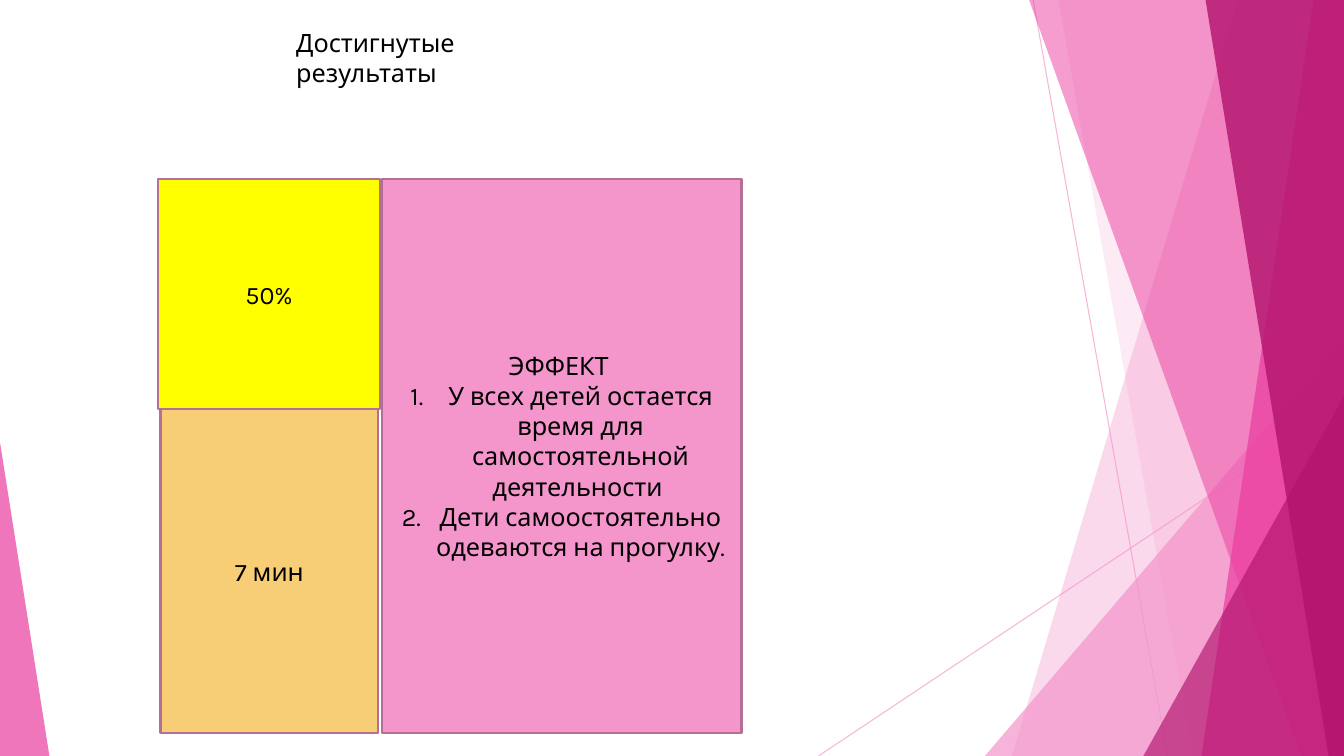
import pptx
import pptx.util
import pptx.dml.color
import pptx.enum.shapes
import pptx.enum.text
import pptx.oxml.ns
from lxml import etree

Pt = pptx.util.Pt
RGBColor = pptx.dml.color.RGBColor
MSO_SHAPE = pptx.enum.shapes.MSO_SHAPE
qn = pptx.oxml.ns.qn

WIDTH, HEIGHT = 960, 540
FONT, FONT_SIZE = "Karla", 18
BLACK = RGBColor(0x00, 0x00, 0x00)
YELLOW = RGBColor(0xFF, 0xFF, 0x00)
SAND = RGBColor(0xF7, 0xCD, 0x75)
LIGHT_PINK = RGBColor(0xF4, 0x96, 0xCB)
HOT_PINK = RGBColor(0xEB, 0x3D, 0x9F)
DARK_PINK = RGBColor(0xB2, 0x13, 0x6D)
BORDER = RGBColor(0xB5, 0x6F, 0x96)

TITLE = "Достигнутые результаты"
TITLE_BOX = (204.5, 15.8, 227, 29)

# left, top, width, height, fill, paragraphs
PANELS = [
    (113, 127.6, 158.4, 164.8, YELLOW, ["50%"]),
    (114.7, 292.4, 155.5, 231.2, SAND, ["7 мин"]),
    (272.7, 127.6, 257, 396, LIGHT_PINK, [
        "ЭФФЕКТ ",
        "У всех детей остается время для самостоятельной деятельности ",
        "Дети самоостоятельно одеваются на прогулку.",
    ]),
]
NUMBER_INDENT = 27

# x1, y1, x2, y2
RAYS = [(738, 0, 834, HEIGHT), (WIDTH, 290, 584.6, HEIGHT)]

# "band": left edge at the top and at the bottom; it reaches the right slide edge
# "triangle": left, top, width, apex position; it stands on the bottom edge
FACETS = [
    ("band", (884.2, 722.9), LIGHT_PINK, 36),
    ("band", (756, 851.8), LIGHT_PINK, 20),
    ("triangle", (703.5, 240, 256.5, 1), LIGHT_PINK, 72),
    ("band", (735.1, 929.5), HOT_PINK, 50),
    ("band", (938.2, 858.2), HOT_PINK, 70),
    ("band", (861.1, 949), DARK_PINK, 80),
    ("triangle", (816.7, 283, 143.3, 1), DARK_PINK, 66),
    ("triangle", (0, 316, 35.3, 0), HOT_PINK, 70),
]


def set_opacity(fill_owner, percent):
    """Add an alpha value to the solid colour found inside the element."""
    color = next(fill_owner.iter(qn("a:srgbClr")))
    etree.SubElement(color, qn("a:alpha")).set("val", str(percent * 1000))


def add_ray(slide, points):
    ray = slide.shapes.add_connector(
        pptx.enum.shapes.MSO_CONNECTOR.STRAIGHT, *map(Pt, points))
    ray.line.color.rgb = LIGHT_PINK
    ray.line.width = Pt(0.75)
    properties = ray._element.spPr
    set_opacity(properties, 70)
    etree.SubElement(properties, qn("a:effectLst"))


def add_facet(slide, kind, geometry, color, opacity):
    if kind == "band":
        top_x, bottom_x = geometry
        builder = slide.shapes.build_freeform(Pt(top_x), Pt(0))
        corners = [(WIDTH, 0), (WIDTH, HEIGHT), (bottom_x, HEIGHT)]
        builder.add_line_segments([(Pt(x), Pt(y)) for x, y in corners], close=True)
        facet = builder.convert_to_shape()
    else:
        left, top, width, apex = geometry
        facet = slide.shapes.add_shape(
            MSO_SHAPE.ISOSCELES_TRIANGLE, Pt(left), Pt(top), Pt(width), Pt(HEIGHT - top))
        facet.adjustments[0] = apex
    facet.shadow.inherit = False
    facet.fill.solid()
    facet.fill.fore_color.rgb = color
    facet.line.fill.background()
    set_opacity(facet._element.spPr, opacity)


def write(text_frame, lines, alignment):
    text_frame.word_wrap = True
    text_frame.text = "\n".join(lines)
    for paragraph in text_frame.paragraphs:
        paragraph.alignment = alignment
        for run in paragraph.runs:
            run.font.name = FONT
            run.font.size = Pt(FONT_SIZE)
            run.font.color.rgb = BLACK


def number(paragraph):
    properties = paragraph._p.get_or_add_pPr()
    properties.set("marL", str(Pt(NUMBER_INDENT)))
    properties.set("indent", str(-Pt(NUMBER_INDENT)))
    etree.SubElement(properties, qn("a:buFont")).set("typeface", "+mj-lt")
    etree.SubElement(properties, qn("a:buAutoNum")).set("type", "arabicPeriod")


def add_panel(slide, left, top, width, height, color, lines):
    panel = slide.shapes.add_shape(
        MSO_SHAPE.RECTANGLE, Pt(left), Pt(top), Pt(width), Pt(height))
    panel.shadow.inherit = False
    panel.fill.solid()
    panel.fill.fore_color.rgb = color
    panel.line.color.rgb = BORDER
    panel.line.width = Pt(1.5)
    panel.text_frame.vertical_anchor = pptx.enum.text.MSO_ANCHOR.MIDDLE
    write(panel.text_frame, lines, pptx.enum.text.PP_ALIGN.CENTER)
    for paragraph in panel.text_frame.paragraphs[1:]:
        number(paragraph)


def main():
    presentation = pptx.Presentation()
    presentation.slide_width = Pt(WIDTH)
    presentation.slide_height = Pt(HEIGHT)
    slide = presentation.slides.add_slide(presentation.slide_layouts[6])

    for ray in RAYS:
        add_ray(slide, ray)
    for facet in FACETS:
        add_facet(slide, *facet)

    title = slide.shapes.add_textbox(*map(Pt, TITLE_BOX))
    write(title.text_frame, [TITLE], pptx.enum.text.PP_ALIGN.LEFT)
    for panel in PANELS:
        add_panel(slide, *panel)

    presentation.save("out.pptx")


if __name__ == "__main__":
    main()
